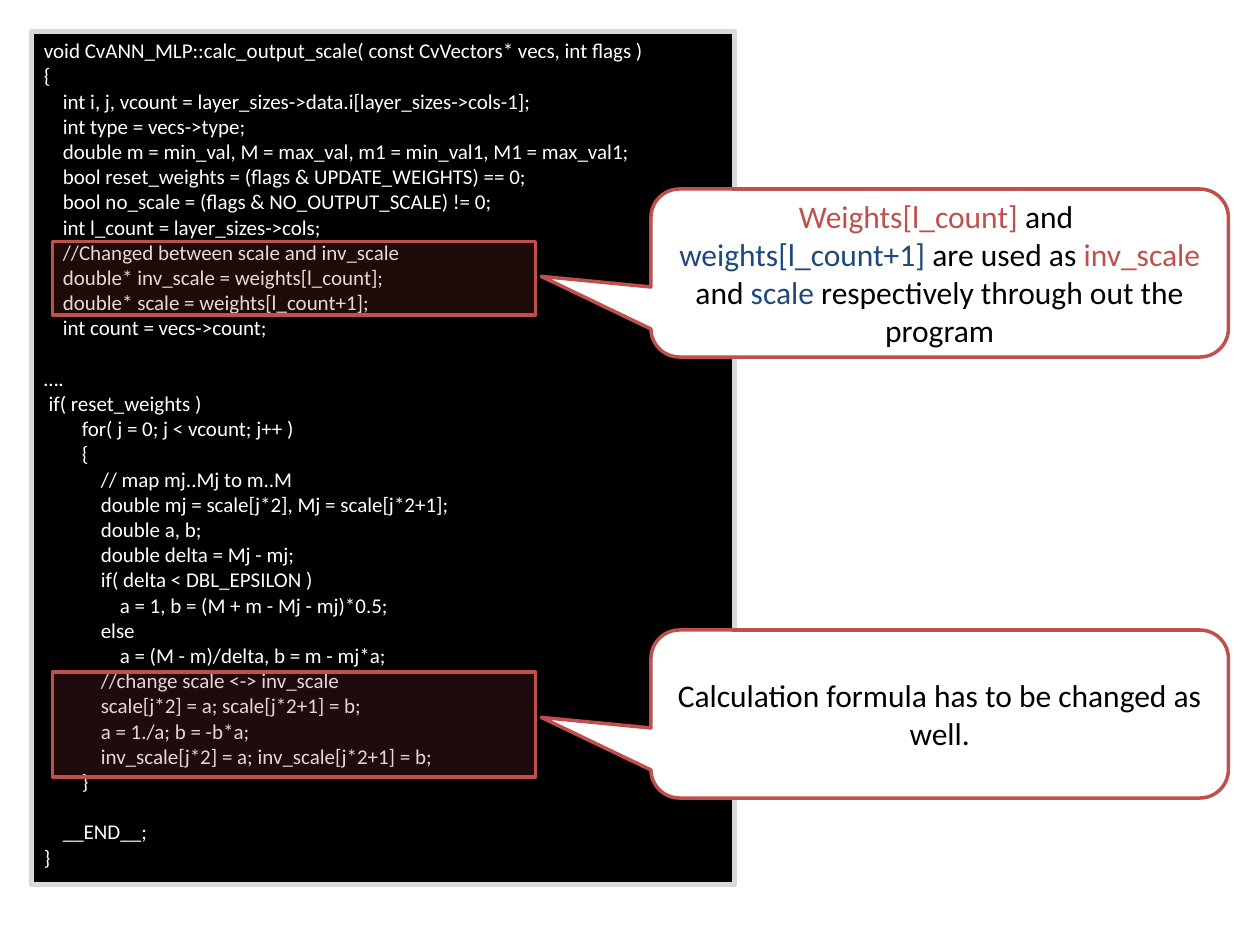
from lxml import etree
from pptx import Presentation
from pptx.dml.color import RGBColor
from pptx.enum.shapes import MSO_SHAPE
from pptx.enum.text import MSO_ANCHOR, PP_ALIGN
from pptx.oxml.ns import qn
from pptx.util import Pt

RECTANGLE = MSO_SHAPE.RECTANGLE
CALLOUT = MSO_SHAPE.ROUNDED_RECTANGULAR_CALLOUT
TOP, MIDDLE = MSO_ANCHOR.TOP, MSO_ANCHOR.MIDDLE
LEFT, CENTER = PP_ALIGN.LEFT, PP_ALIGN.CENTER

COLORS = {
    "black": "000000", "white": "FFFFFF", "frame": "D9D9D9",
    "red": "C0504D", "dark red": "953735", "blue": "1F497D",
}

# Blocks of code separated by one empty line; each line is (columns of indent, text)
CODE_BLOCKS = [
    [
        (0, "void CvANN_MLP::calc_output_scale( const CvVectors* vecs, int flags )"),
        (0, "{"),
        (4, "int i, j, vcount = layer_sizes->data.i[layer_sizes->cols-1];"),
        (4, "int type = vecs->type;"),
        (4, "double m = min_val, M = max_val, m1 = min_val1, M1 = max_val1;"),
        (4, "bool reset_weights = (flags & UPDATE_WEIGHTS) == 0;"),
        (4, "bool no_scale = (flags & NO_OUTPUT_SCALE) != 0;"),
        (4, "int l_count = layer_sizes->cols;"),
        (4, "//Changed between scale and inv_scale"),
        (4, "double* inv_scale = weights[l_count];"),
        (4, "double* scale = weights[l_count+1];"),
        (4, "int count = vecs->count;"),
    ],
    [
        (0, "…."),
        (1, "if( reset_weights )"),
        (8, "for( j = 0; j < vcount; j++ )"),
        (8, "{"),
        (12, "// map mj..Mj to m..M"),
        (12, "double mj = scale[j*2], Mj = scale[j*2+1];"),
        (12, "double a, b;"),
        (12, "double delta = Mj - mj;"),
        (12, "if( delta < DBL_EPSILON )"),
        (16, "a = 1, b = (M + m - Mj - mj)*0.5;"),
        (12, "else"),
        (16, "a = (M - m)/delta, b = m - mj*a;"),
        (12, "//change scale <-> inv_scale"),
        (12, "scale[j*2] = a; scale[j*2+1] = b;"),
        (12, "a = 1./a; b = -b*a;"),
        (12, "inv_scale[j*2] = a; inv_scale[j*2+1] = b;"),
        (8, "}"),
    ],
    [
        (4, "__END__;"),
        (0, "}"),
    ],
]
COLUMN_WIDTH = 2.71
EMPTY_LINE = 14.4

CODE_BOX = (18, 18, 401.75, 487.5)

# Top, height and opacity in percent of the marked code
HIGHLIGHTS = [(138, 42, 20), (384, 60, 21)]
HIGHLIGHT_LEFT, HIGHLIGHT_WIDTH = 30, 276

# Top and paragraphs of (text, colour) runs
CALLOUTS = [
    (108, [
        [("Weights[l_count] ", "red"), ("and ", "black")],
        [("weights[l_count+1] ", "blue"), ("are used as ", "black"),
         ("inv_scale", "red"), (" and ", "black"), ("scale ", "blue"),
         ("respectively through out the program", "black")],
    ]),
    (360, [[("Calculation formula has to be changed as well.", "black")]]),
]
CALLOUT_LEFT, CALLOUT_WIDTH, CALLOUT_HEIGHT = 372, 330, 96
CALLOUT_ADJUSTMENTS = (-0.69, 0.02, 0.17)


def color(name):
    return RGBColor.from_string(COLORS[name])


def add_box(slide, kind, box, fill, line, line_width):
    shape = slide.shapes.add_shape(kind, *(Pt(length) for length in box))
    shape.shadow.inherit = False
    shape.fill.solid()
    shape.fill.fore_color.rgb = color(fill)
    shape.line.color.rgb = color(line)
    shape.line.width = Pt(line_width)
    return shape


def set_opacity(shape, percent):
    fill_color = shape.fill._xPr.find(qn("a:solidFill"))[0]
    etree.SubElement(fill_color, qn("a:alpha")).set("val", str(percent * 1000))


def write_text(shape, paragraphs, size, anchor, alignment):
    """Write paragraphs of (text, colour) runs and return the new paragraphs."""
    frame = shape.text_frame
    frame.word_wrap = True
    frame.vertical_anchor = anchor
    for index, runs in enumerate(paragraphs):
        paragraph = frame.add_paragraph() if index else frame.paragraphs[0]
        paragraph.alignment = alignment
        for text, color_name in runs:
            run = paragraph.add_run()
            run.text = text
            font_format = {"name": "Calibri", "size": Pt(size)}
            for attribute, value in font_format.items():
                setattr(run.font, attribute, value)
            run.font.color.rgb = color(color_name)
    return frame.paragraphs


def add_code(slide):
    shape = add_box(slide, RECTANGLE, CODE_BOX, "black", "frame", 3)
    lines = [
        (columns, text, block_index > 0 and line_index == 0)
        for block_index, block in enumerate(CODE_BLOCKS)
        for line_index, (columns, text) in enumerate(block)
    ]
    runs = [[(text, "white")] for _, text, _ in lines]
    paragraphs = write_text(shape, runs, 12, TOP, LEFT)
    for paragraph, (columns, _, after_gap) in zip(paragraphs, lines):
        indent = Pt(columns * COLUMN_WIDTH)
        paragraph._p.get_or_add_pPr().set("marL", str(int(indent)))
        if after_gap:
            paragraph.space_before = Pt(EMPTY_LINE)


def add_highlight(slide, top, height, opacity):
    box = (HIGHLIGHT_LEFT, top, HIGHLIGHT_WIDTH, height)
    shape = add_box(slide, RECTANGLE, box, "dark red", "red", 2)
    set_opacity(shape, opacity)


def add_callout(slide, top, paragraphs):
    box = (CALLOUT_LEFT, top, CALLOUT_WIDTH, CALLOUT_HEIGHT)
    shape = add_box(slide, CALLOUT, box, "white", "red", 2)
    for index, value in enumerate(CALLOUT_ADJUSTMENTS):
        shape.adjustments[index] = value
    write_text(shape, paragraphs, 18, MIDDLE, CENTER)


def main():
    presentation = Presentation()
    presentation.slide_width, presentation.slide_height = Pt(720), Pt(540)
    slide = presentation.slides.add_slide(presentation.slide_layouts[6])
    add_code(slide)
    for highlight in HIGHLIGHTS:
        add_highlight(slide, *highlight)
    for callout in CALLOUTS:
        add_callout(slide, *callout)
    presentation.save("out.pptx")


if __name__ == "__main__":
    main()
